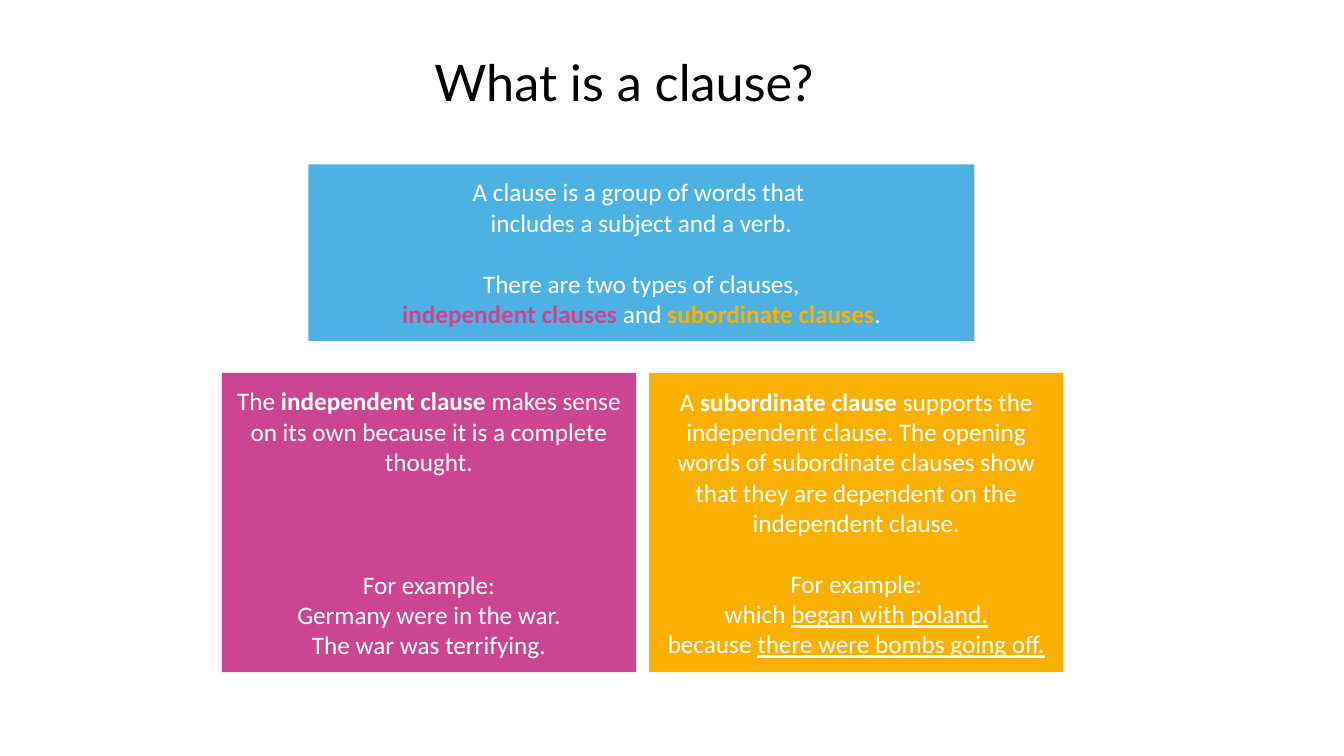
import dataclasses

import pptx
import pptx.dml.color
import pptx.enum.shapes
import pptx.enum.text
import pptx.util

Cm = pptx.util.Cm
Pt = pptx.util.Pt
RGB = pptx.dml.color.RGBColor.from_string
Align = pptx.enum.text.PP_ALIGN
Anchor = pptx.enum.text.MSO_ANCHOR


@dataclasses.dataclass(frozen=True)
class Theme:
    blue: str = "4DB1E3"
    pink: str = "CB4593"
    rose: str = "CA4692"
    gold: str = "FAB001"
    white: str = "FFFFFF"
    black: str = "000000"
    head: str = "Lato"
    body: str = "Calibri"
    large: int = 36
    small: int = 18
    line: int = 22


THEME = Theme()


@dataclasses.dataclass
class Run:
    text: str
    bold: bool = False
    under: bool = False
    color: str = THEME.white


@dataclasses.dataclass
class Para:
    runs: list
    gap: int = 0  # blank lines above


INTRO = [
    Para([Run("A clause is a group of words that ")]),
    Para([Run("includes a subject and a verb.")]),
    Para([Run("There are two types of clauses,")], gap=1),
    Para([
        Run("independent clauses ", bold=True, color=THEME.rose),
        Run("and "),
        Run("subordinate clauses", bold=True, color=THEME.gold),
        Run("."),
    ]),
]
MAIN = [
    Para([
        Run("The "),
        Run("independent clause ", bold=True),
        Run("makes sense on its own because it is a complete thought."),
    ]),
    Para([Run("For example:")], gap=3),
    Para([Run("Germany were in the war.")]),
    Para([Run("The war was terrifying.")]),
]
SUB = [
    Para([
        Run("A "),
        Run("subordinate clause ", bold=True),
        Run("supports the independent clause. The opening words of "
            "subordinate clauses show that they are dependent on the "
            "independent clause."),
    ]),
    Para([Run("For example:")], gap=1),
    Para([Run("which "), Run("began with poland.", under=True)]),
    Para([Run("because "), Run("there were bombs going off.", under=True)]),
]


def add_title(slide, text, left, top, width, height):
    title = slide.shapes.title
    title.left, title.top = Cm(left), Cm(top)
    title.width, title.height = Cm(width), Cm(height)
    frame = title.text_frame
    frame.text = text
    frame.vertical_anchor = Anchor.MIDDLE
    para = frame.paragraphs[0]
    para.alignment = Align.LEFT
    para.line_spacing = 0.9
    para.font.name = THEME.head
    para.font.size = Pt(THEME.large)
    para.font.color.rgb = RGB(THEME.black)


def fill_text(frame, paras):
    for index, item in enumerate(paras):
        para = frame.add_paragraph() if index else frame.paragraphs[0]
        para.alignment = Align.CENTER
        para.space_before = Pt(item.gap * THEME.line)
        para.font.name = THEME.body
        para.font.size = Pt(THEME.small)
        for part in item.runs:
            run = para.add_run()
            run.text = part.text
            run.font.color.rgb = RGB(part.color)
            if part.bold:
                run.font.bold = True
            if part.under:
                run.font.underline = True


def add_panel(slide, color, paras, left, top, width, height):
    panel = slide.shapes.add_shape(
        pptx.enum.shapes.MSO_SHAPE.RECTANGLE,
        Cm(left), Cm(top), Cm(width), Cm(height))
    panel.shadow.inherit = False
    panel.fill.solid()
    panel.fill.fore_color.rgb = RGB(color)
    panel.line.fill.background()
    frame = panel.text_frame
    frame.word_wrap = True
    frame.auto_size = pptx.enum.text.MSO_AUTO_SIZE.SHAPE_TO_FIT_TEXT
    frame.vertical_anchor = Anchor.MIDDLE
    frame.margin_left = frame.margin_right = Cm(0.3)
    frame.margin_top = frame.margin_bottom = Cm(0.3)
    fill_text(frame, paras)


def add_pair(slide, left, top, width, height, gap=0.33):
    """Place the two clause types side by side."""
    wide = (width - gap) / 2
    pair = [(THEME.pink, MAIN), (THEME.gold, SUB)]
    for index, (color, paras) in enumerate(pair):
        add_panel(slide, color, paras,
                  left + index * (wide + gap), top, wide, height)


def main():
    deck = pptx.Presentation()
    deck.slide_width, deck.slide_height = Cm(33.87), Cm(19.05)
    slide = deck.slides.add_slide(deck.slide_layouts.get_by_name("Title Only"))
    add_title(slide, "What is a clause?", 10.69, 0.76, 10.95, 2.77)
    add_panel(slide, THEME.blue, INTRO, 7.77, 4.14, 16.79, 4.45)
    add_pair(slide, 5.59, 9.4, 21.21, 7.54)
    deck.save("out.pptx")


if __name__ == "__main__":
    main()
